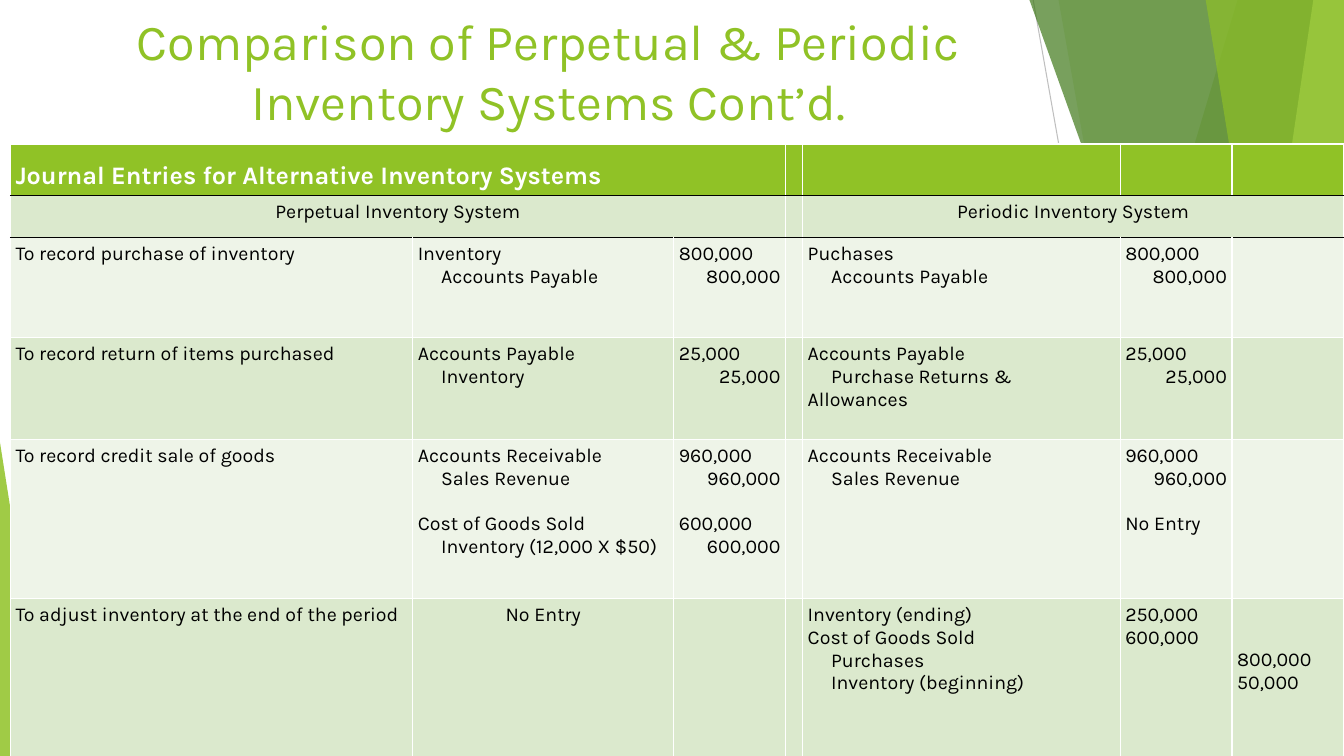
"""Build a slide comparing journal entries of two inventory systems."""
import pptx
import pptx.util
import pptx.dml.color
import pptx.enum.shapes
import pptx.enum.text
import pptx.oxml
import lxml.etree

Pt = pptx.util.Pt
NS = 'xmlns:a="http://schemas.openxmlformats.org/drawingml/2006/main"'
ALIGN = pptx.enum.text.PP_ALIGN
ANCHOR = pptx.enum.text.MSO_ANCHOR
IN = {"indent": 16.7}
RIGHT = {"align": ALIGN.RIGHT}
MID = {"align": ALIGN.CENTER}
GAP = {"before": 16.3}


def paint(fill, color, alpha=100):
    fill.solid()
    fill.fore_color.rgb = pptx.dml.color.RGBColor.from_string(color)
    if alpha < 100:
        tag = fill.fore_color._xFill[0]
        tag.append(pptx.oxml.parse_xml(f'<a:alpha {NS} val="{alpha * 1000}"/>'))


def write(frame, lines, size=14, color="000000", bold=False):
    frame.word_wrap = True
    for num, line in enumerate(lines):
        words, form = (line, {}) if isinstance(line, str) else line
        para = frame.add_paragraph() if num else frame.paragraphs[0]
        para.alignment = form.get("align", ALIGN.LEFT)
        para.space_before = Pt(form.get("before", 0))
        para._p.get_or_add_pPr().set("indent", str(Pt(form.get("indent", 0))))
        run = para.add_run()
        run.text = words
        run.font.name = "Karla"
        run.font.size = Pt(size)
        run.font.bold = bold
        paint(run.font.fill, color)


deck = pptx.Presentation()
deck.slide_width, deck.slide_height = Pt(960), Pt(540)
slide = deck.slides.add_slide(deck.slide_layouts[6])
shapes = slide.shapes

for ends, color in [((738, 0, 833.8, 540), "BFBFBF"), ((960, 290.2, 584.6, 540), "D9D9D9")]:
    line = shapes.add_connector(pptx.enum.shapes.MSO_CONNECTOR.STRAIGHT, *map(Pt, ends))
    paint(line.line.fill, color)
    line.line.width = Pt(0.75)
    lxml.etree.SubElement(line._element.spPr, pptx.oxml.ns.qn("a:effectLst"))

# Each band is (top left, bottom left, bottom right); a wedge is (left, top, width, height, apex).
bands = [
    ("band", (884.2, 722.9, 960), "90C226", 30),
    ("band", (756, 851.8, 960), "90C226", 20),
    ("wedge", (703.4, 239.8, 256.6, 300.2, 1), "54A021", 72),
    ("band", (735.1, 929.5, 960), "3F7819", 70),
    ("band", (938.2, 858.2, 960), "C0E474", 70),
    ("band", (861.1, 949, 960), "90C226", 65),
    ("wedge", (816.5, 283, 143.5, 257, 1), "90C226", 80),
    ("wedge", (0, 316.1, 35.3, 223.9, 0), "90C226", 85),
]
for kind, place, color, alpha in bands:
    if kind == "band":
        top, low, right = map(Pt, place)
        pen = shapes.build_freeform(top, Pt(-0.7), scale=1.0)
        pen.add_line_segments([(right, Pt(-0.7)), (right, Pt(540)), (low, Pt(540))], close=True)
        shape = pen.convert_to_shape()
    else:
        shape = shapes.add_shape(pptx.enum.shapes.MSO_SHAPE.ISOSCELES_TRIANGLE, *map(Pt, place[:4]))
        shape.adjustments[0] = place[4]
    paint(shape.fill, color, alpha)
    shape.line.fill.background()
    shape.shadow.inherit = False

title = shapes.add_textbox(Pt(53.3), Pt(-1.4), Pt(676.8), Pt(103.7)).text_frame
title.vertical_anchor = ANCHOR.MIDDLE
write(title, [("Comparison of Perpetual & Periodic Inventory Systems Cont’d.", MID)], 36, "90C226")

cols = [287.3, 186.5, 79.9, 12.2, 226.8, 79.9, 79.9]
rows = [36.8, 30, 71.6, 72.6, 113.6, 113.6]
cells = [
    {0: ["Journal Entries for Alternative Inventory Systems"]},
    {0: [("Perpetual Inventory System", MID)], 4: [("Periodic Inventory System", MID)]},
    {0: ["To record purchase of inventory"],
     1: ["Inventory", ("Accounts Payable", IN)],
     2: ["800,000", ("800,000", RIGHT)],
     4: ["Puchases", ("Accounts Payable", IN)],
     5: ["800,000", ("800,000", RIGHT)]},
    {0: ["To record return of items purchased"],
     1: ["Accounts Payable", ("Inventory", IN)],
     2: ["25,000", ("25,000", RIGHT)],
     4: ["Accounts Payable", ("Purchase Returns & Allowances", IN)],
     5: ["25,000", ("25,000", RIGHT)]},
    {0: ["To record credit sale of goods"],
     1: ["Accounts Receivable", ("Sales Revenue", IN),
         ("Cost of Goods Sold", GAP), ("Inventory (12,000 X $50)", IN)],
     2: ["960,000", ("960,000", RIGHT), ("600,000", GAP), ("600,000", RIGHT)],
     4: ["Accounts Receivable", ("Sales Revenue", IN)],
     5: ["960,000", ("960,000", RIGHT), ("No Entry", GAP)]},
    {0: ["To adjust inventory at the end of the period"],
     1: [("No Entry", MID)],
     4: ["Inventory (ending)", "Cost of Goods Sold",
         ("Purchases", IN), ("Inventory (beginning)", IN)],
     5: ["250,000", "600,000"],
     6: ["800,000", "50,000"]},
]
table = shapes.add_table(len(rows), len(cols), Pt(7.5), Pt(102.8), Pt(sum(cols)), Pt(sum(rows))).table
for col, width in zip(table.columns, cols):
    col.width = Pt(width)
for row, height in zip(table.rows, rows):
    row.height = Pt(height)

for r, row in enumerate(cells):
    for c in range(len(cols)):
        cell = table.cell(r, c)
        cell.margin_left = cell.margin_right = cell.margin_top = cell.margin_bottom = Pt(3.6)
        paint(cell.fill, "90C226" if r == 0 else "DBE9CD" if r % 2 else "EEF4E8")
        edges = {"L": "FFFFFF", "R": "FFFFFF",
                 "T": "000000" if r in (1, 2) else "FFFFFF",
                 "B": "000000" if r in (0, 1) else "FFFFFF"}
        for spot, (side, color) in enumerate(edges.items()):
            cell._tc.tcPr.insert(spot, pptx.oxml.parse_xml(
                f'<a:ln{side} {NS} w="12700"><a:solidFill><a:srgbClr val="{color}"/>'
                f'</a:solidFill></a:ln{side}>'))
        if c in row:
            look = {"size": 18, "color": "FFFFFF", "bold": True} if r == 0 else {}
            write(cell.text_frame, row[c], **look)

table.cell(0, 0).vertical_anchor = ANCHOR.BOTTOM
table.cell(5, 6).margin_top = Pt(36.2)
for r, c in [(0, 0), (1, 0), (1, 4)]:
    table.cell(r, c).merge(table.cell(r, c + 2))

deck.save("out.pptx")
